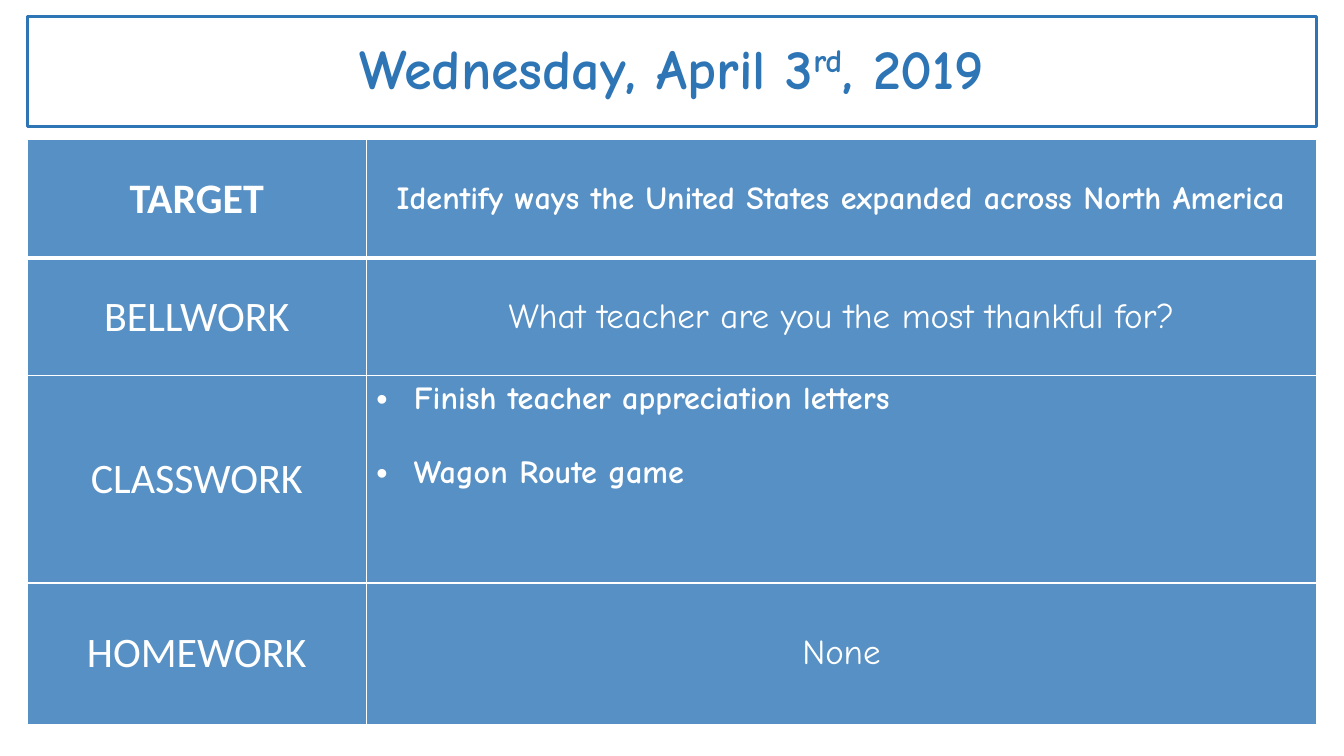
"""Build a daily class agenda slide with a date banner and a four-row table."""
from pptx import Presentation
from pptx.dml.color import RGBColor
from pptx.enum.shapes import MSO_SHAPE as SHAPE
from pptx.enum.text import MSO_ANCHOR as ANCHOR, PP_ALIGN as ALIGN
from pptx.oxml import parse_xml
from pptx.oxml.ns import nsdecls
from pptx.util import Cm, Pt

BLUE = RGBColor(0x2E, 0x75, 0xB6)
WHITE = RGBColor(0xFF, 0xFF, 0xFF)
LABEL_FONT, TEXT_FONT = "Calibri", "Comic Neue"
LEFT, WIDTH = Cm(0.69), Cm(32.49)


def add_run(p, text, size, font, color, bold):
    r = p.add_run()
    r.text = text
    r.font.size, r.font.name, r.font.bold = Pt(size), font, bold
    r.font.color.rgb = color
    return r


def fill_solid(fill, color, opacity):
    fill.solid()
    fill.fore_color.rgb = color
    clr = fill._xPr.find(".//{*}srgbClr")
    clr.append(parse_xml(f'<a:alpha {nsdecls("a")} val="{opacity * 1000}"/>'))


prs = Presentation()
prs.slide_width, prs.slide_height = Cm(33.87), Cm(19.05)
s = prs.slides.add_slide(prs.slide_layouts[6])

rows = [
    ("TARGET", ["Identify ways the United States expanded across North America"], 3.0, 23, True),
    ("BELLWORK", ["What teacher are you the most thankful for?"], 2.95, 25, False),
    ("CLASSWORK", ["Finish teacher appreciation letters", "Wagon Route game"], 5.23, 23, True),
    ("HOMEWORK", ["None"], 3.56, 25, False),
]
table = s.shapes.add_table(len(rows), 2, LEFT, Cm(3.51), WIDTH, Cm(14.74)).table
table.first_row = table.horz_banding = False
table.columns[0].width, table.columns[1].width = Cm(8.54), Cm(23.95)

for i, (label, lines, height, size, bold) in enumerate(rows):
    table.rows[i].height = Cm(height)
    bulleted = len(lines) > 1
    for j, cell in enumerate(table.rows[i].cells):
        fill_solid(cell.fill, BLUE, 80)
        tcPr = cell._tc.get_or_add_tcPr()
        for k, side in enumerate("LRTB"):
            heavy = (i, side) in ((0, "B"), (1, "T"))
            tcPr.insert(k, parse_xml(
                f'<a:ln{side} {nsdecls("a")} w="{Pt(3 if heavy else 1)}">'
                f'<a:solidFill><a:srgbClr val="{WHITE}"/></a:solidFill></a:ln{side}>'))
        cell.vertical_anchor = ANCHOR.TOP if j and bulleted else ANCHOR.MIDDLE
        tf = cell.text_frame
        for n, text in enumerate(lines if j else [label]):
            p = tf.add_paragraph() if n else tf.paragraphs[0]
            if j:
                add_run(p, text, size, TEXT_FONT, WHITE, bold)
            else:
                add_run(p, text, 30, LABEL_FONT, WHITE, i == 0)
            if j and bulleted:
                p.space_before = Pt(26.5 * n)
                pPr = p._p.get_or_add_pPr()
                pPr.set("marL", str(Cm(0.95)))
                pPr.set("indent", str(-Cm(0.95)))
                pPr.append(parse_xml(f'<a:buFont {nsdecls("a")} typeface="Arial"/>'))
                pPr.append(parse_xml(f'<a:buChar {nsdecls("a")} char="•"/>'))
            else:
                p.alignment = ALIGN.CENTER

banner = s.shapes.add_shape(SHAPE.RECTANGLE, LEFT, Cm(0.41), WIDTH, Cm(2.54))
banner.shadow.inherit = False
fill_solid(banner.fill, WHITE, 65)
banner.line.fill.background()
tf = banner.text_frame
tf.word_wrap = True
tf.vertical_anchor = ANCHOR.MIDDLE
p = tf.paragraphs[0]
p.alignment = ALIGN.CENTER
for text, baseline in (("Wednesday, April 3", 0), ("rd", 30000), (", 2019", 0)):
    r = add_run(p, text, 40, TEXT_FONT, BLUE, True)
    r._r.get_or_add_rPr().set("baseline", str(baseline))

frame = s.shapes.add_shape(SHAPE.RECTANGLE, LEFT, Cm(0.41), WIDTH, Cm(2.79))
frame.shadow.inherit = False
frame.fill.background()
frame.line.color.rgb = BLUE
frame.line.width = Pt(2.25)

prs.save("out.pptx")
